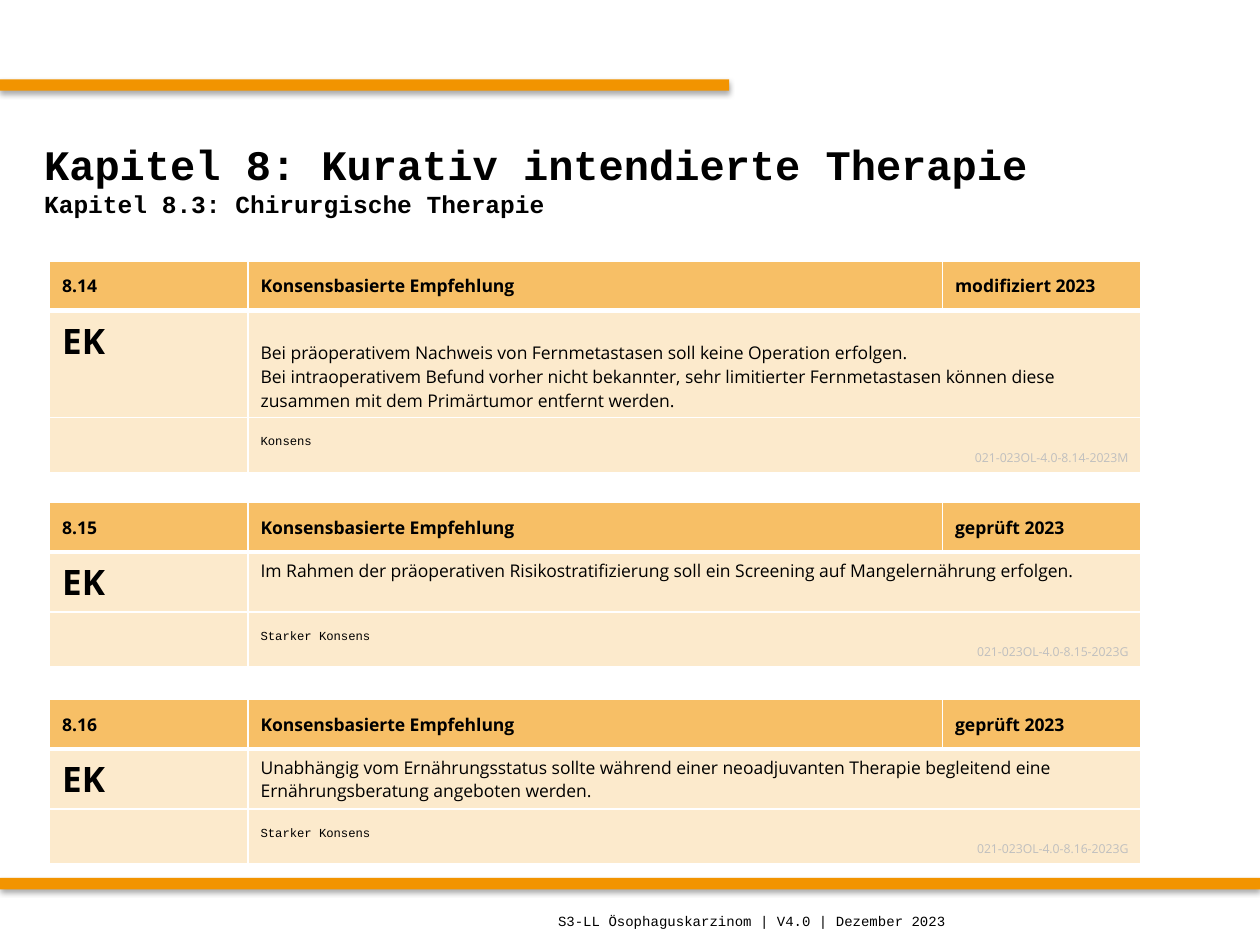
from lxml import etree
from pptx import Presentation
from pptx.dml.color import RGBColor
from pptx.enum.shapes import MSO_SHAPE
from pptx.enum.text import MSO_ANCHOR, PP_ALIGN
from pptx.oxml import parse_xml
from pptx.oxml.ns import nsdecls
from pptx.util import Cm, Pt

TOP, MIDDLE, BOTTOM = MSO_ANCHOR.TOP, MSO_ANCHOR.MIDDLE, MSO_ANCHOR.BOTTOM
RIGHT = PP_ALIGN.RIGHT
RECTANGLE = MSO_SHAPE.RECTANGLE

COLORS = {
    "bar": "F29400",
    "header": "F7BF66",
    "body": "FCEACC",
    "border": "FFFFFF",
    "text": "000000",
    "id": "BFBFBF",
}
MONO, SANS = "Courier New", "Open Sans"

TITLE = "Kapitel 8: Kurativ intendierte Therapie"
SUBTITLE = "Kapitel 8.3: Chirurgische Therapie"
FOOTER = "S3-LL Ösophaguskarzinom | V4.0 | Dezember 2023"
HEADING = "Konsensbasierte Empfehlung"
GRADE = "EK"

BARS = [(1.6, 14.7), (17.7, 25.4)]  # top, width
BAR_HEIGHT = 0.23

TABLE_LEFT = 1.0
COLUMNS = [4.0, 14.0, 4.0]
HEADER_HEIGHT, CONSENSUS_HEIGHT = 1.0, 1.1
CELL_MARGIN = 0.13

RECOMMENDATIONS = [
    {
        "number": "8.14", "status": "modifiziert 2023",
        "statements": [
            "Bei präoperativem Nachweis von Fernmetastasen soll keine Operation erfolgen.",
            "Bei intraoperativem Befund vorher nicht bekannter, sehr limitierter "
            "Fernmetastasen können diese zusammen mit dem Primärtumor entfernt werden.",
        ],
        "consensus": "Konsens", "id": "021-023OL-4.0-8.14-2023M",
        "top": 5.26, "statement_height": 2.16, "statement_margin": 0.61,
    },
    {
        "number": "8.15", "status": "geprüft 2023",
        "statements": [
            "Im Rahmen der präoperativen Risikostratifizierung soll ein Screening "
            "auf Mangelernährung erfolgen.",
        ],
        "consensus": "Starker Konsens", "id": "021-023OL-4.0-8.15-2023G",
        "top": 10.13, "statement_height": 1.21, "statement_margin": CELL_MARGIN,
    },
    {
        "number": "8.16", "status": "geprüft 2023",
        "statements": [
            "Unabhängig vom Ernährungsstatus sollte während einer neoadjuvanten "
            "Therapie begleitend eine Ernährungsberatung angeboten werden.",
        ],
        "consensus": "Starker Konsens", "id": "021-023OL-4.0-8.16-2023G",
        "top": 14.1, "statement_height": 1.21, "statement_margin": CELL_MARGIN,
    },
]


def rgb(name):
    return RGBColor.from_string(COLORS[name])


def write(frame, lines):
    """Fill a text frame with (text, size, font, bold, colour, alignment) lines."""
    for index, (text, size, font, bold, color, alignment) in enumerate(lines):
        paragraph = frame.paragraphs[0] if index == 0 else frame.add_paragraph()
        paragraph.alignment = alignment
        run = paragraph.add_run()
        run.text = text
        run.font.size = Pt(size)
        run.font.name = font
        run.font.bold = bold
        run.font.color.rgb = rgb(color)


def add_text_box(slide, left, top, width, height, lines):
    frame = slide.shapes.add_textbox(Cm(left), Cm(top), Cm(width), Cm(height)).text_frame
    frame.word_wrap = True
    frame.vertical_anchor = MIDDLE
    write(frame, lines)


def add_bar(slide, top, width):
    bar = slide.shapes.add_shape(RECTANGLE, Cm(0), Cm(top), Cm(width), Cm(BAR_HEIGHT))
    bar.fill.solid()
    bar.fill.fore_color.rgb = rgb("bar")
    bar.line.fill.background()
    bar._element.spPr.append(parse_xml(
        f'<a:effectLst {nsdecls("a")}>'
        '<a:outerShdw blurRad="40000" dist="23000" dir="5400000" rotWithShape="0">'
        f'<a:srgbClr val="{COLORS["text"]}"><a:alpha val="35000"/></a:srgbClr>'
        '</a:outerShdw></a:effectLst>'))


def style_cell(cell, row):
    """Set fill and borders; the rule below the header row is thicker."""
    cell.fill.solid()
    cell.fill.fore_color.rgb = rgb("header" if row == 0 else "body")
    widths = {"L": 1, "R": 1, "T": 3 if row == 1 else 1, "B": 3 if row == 0 else 1}
    properties = cell._tc.get_or_add_tcPr()
    for index, (side, width) in enumerate(widths.items()):
        border = parse_xml(f'<a:ln{side} {nsdecls("a")} w="{Pt(width)}"><a:solidFill/></a:ln{side}>')
        namespace = border.nsmap["a"]
        etree.SubElement(border[0], f"{{{namespace}}}srgbClr", val=COLORS["border"])
        properties.insert(index, border)


def add_recommendation(slide, item):
    heights = [HEADER_HEIGHT, item["statement_height"], CONSENSUS_HEIGHT]
    table = slide.shapes.add_table(
        len(heights), len(COLUMNS), Cm(TABLE_LEFT), Cm(item["top"]),
        Cm(sum(COLUMNS)), Cm(sum(heights))).table
    table.first_row = table.horz_banding = False
    for column, width in zip(table.columns, COLUMNS):
        column.width = Cm(width)
    for index, (row, height) in enumerate(zip(table.rows, heights)):
        row.height = Cm(height)
        for cell in row.cells:
            style_cell(cell, index)
            cell.margin_top = cell.margin_bottom = Cm(CELL_MARGIN)
    for row in (1, 2):
        table.cell(row, 1).merge(table.cell(row, 2))

    def fill_cell(row, column, anchor, lines):
        cell = table.cell(row, column)
        cell.vertical_anchor = anchor
        write(cell.text_frame, lines)

    for column, label in enumerate([item["number"], HEADING, item["status"]]):
        fill_cell(0, column, MIDDLE, [(label, 10, SANS, True, "text", None)])
    fill_cell(1, 0, TOP, [(GRADE, 20, SANS, True, "text", None)])
    fill_cell(1, 1, TOP, [(statement, 10, SANS, False, "text", None)
                          for statement in item["statements"]])
    table.cell(1, 1).margin_top = Cm(item["statement_margin"])
    fill_cell(2, 1, BOTTOM, [(item["consensus"], 7, MONO, False, "text", None),
                             (item["id"], 7, SANS, False, "id", RIGHT)])


def main():
    presentation = Presentation()
    presentation.slide_width, presentation.slide_height = Cm(25.4), Cm(19.05)
    slide = presentation.slides.add_slide(presentation.slide_layouts[6])
    for top, width in BARS:
        add_bar(slide, top, width)
    add_text_box(slide, 0.64, 2.11, 24.13, 2.97, [
        (TITLE, 24, MONO, True, "text", None),
        (SUBTITLE, 14, MONO, True, "text", None)])
    for item in RECOMMENDATIONS:
        add_recommendation(slide, item)
    add_text_box(slide, 11.0, 18.06, 14.0, 0.99, [(FOOTER, 8, MONO, False, "text", None)])
    presentation.save("out.pptx")


if __name__ == "__main__":
    main()
